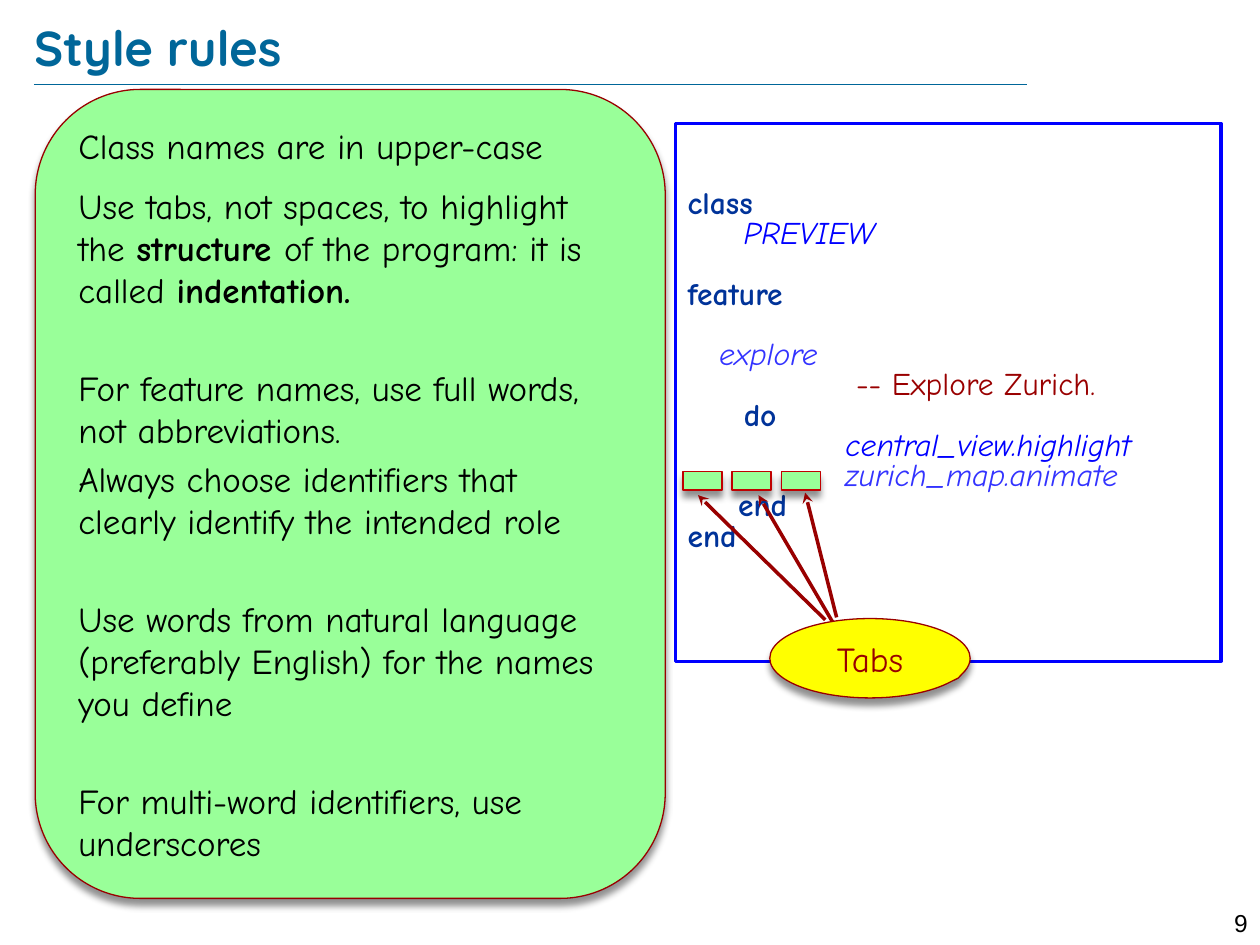
from lxml import etree
from pptx import Presentation
from pptx import util as u
from pptx.dml.color import RGBColor
from pptx.enum import shapes, text
from pptx.oxml.ns import qn

Inches, Pt = u.Inches, u.Pt
TEAL = RGBColor(0x00, 0x66, 0x99)
GREEN = RGBColor(0x99, 0xFF, 0x99)
DARK_RED = RGBColor(0x99, 0x00, 0x00)
RED = RGBColor(0xC0, 0x00, 0x00)
BLUE = RGBColor(0x00, 0x00, 0xFF)
SOFT_BLUE = RGBColor(0x33, 0x33, 0xFF)
NAVY = RGBColor(0x00, 0x33, 0x99)
YELLOW = RGBColor(0xFF, 0xFF, 0x00)
BLACK = RGBColor(0x00, 0x00, 0x00)

TITLE = dict(name="Quicksand", size=Pt(28), bold=True, color=TEAL)
NUMBER = dict(name="Arial", size=Pt(14), color=BLACK)
BODY = dict(name="Comic Neue", size=Pt(20), bold=False, color=BLACK)
STRONG = dict(BODY, bold=True)
LABEL = dict(BODY, color=DARK_RED)
PLAIN = dict(BODY, size=Pt(18))
KEYWORD = dict(PLAIN, bold=True, color=NAVY)
NAME = dict(PLAIN, italic=True, color=BLUE)
FEATURE = dict(NAME, color=SOFT_BLUE)
COMMENT = dict(PLAIN, color=DARK_RED)

SMALL_GAP, LARGE_GAP, BLOCK_GAP, CODE_GAP = 4, 10, 32, 17.3
RULES = [
    (0, [("Class names are in upper-case", BODY)]),
    (LARGE_GAP, [("Use tabs, not spaces, to highlight the ", BODY), ("structure ", STRONG),
                 ("of the program: it is called ", BODY), ("indentation.", STRONG)]),
    (BLOCK_GAP, [("For feature names, use full words, not abbreviations.", BODY)]),
    (SMALL_GAP, [("Always choose identifiers that clearly identify the intended role", BODY)]),
    (BLOCK_GAP, [("Use words from natural language (preferably English) for the names you define", BODY)]),
    (BLOCK_GAP, [("For multi-word identifiers, use underscores", BODY)]),
]
CODE = [
    (0, [("class", KEYWORD)]),
    (0, [("     ", KEYWORD), ("PREVIEW", NAME)]),
    (CODE_GAP, [("feature", KEYWORD)]),
    (CODE_GAP, [("   explore", FEATURE)]),
    (0, [("                -- Explore Zurich.", COMMENT)]),
    (0, [("     do", KEYWORD)]),
    (0, [("               ", PLAIN), ("central_view.highlight", NAME)]),
    (0, [("               ", PLAIN), ("zurich_map.animate", FEATURE)]),
    (0, [("\tend", KEYWORD)]),
    (0, [("end", KEYWORD)]),
]


def format_font(font, values):
    for key, value in values.items():
        if key == "color":
            font.color.rgb = value
        else:
            setattr(font, key, value)


def fill_text(frame, rows, line_spacing=None, tab=None, alignment=text.PP_ALIGN.LEFT, **frame_format):
    frame.word_wrap = True
    for key, value in frame_format.items():
        setattr(frame, key, value)
    for index, (gap, runs) in enumerate(rows):
        paragraph = frame.add_paragraph() if index else frame.paragraphs[0]
        if tab:
            tabs = etree.SubElement(paragraph._p.get_or_add_pPr(), qn("a:tabLst"))
            etree.SubElement(tabs, qn("a:tab"), pos=str(tab), algn="l")
        paragraph.alignment = alignment
        if gap:
            paragraph.space_before = Pt(gap)
        if line_spacing:
            paragraph.line_spacing = line_spacing
        for words, values in runs:
            run = paragraph.add_run()
            run.text = words
            format_font(run.font, values)


def add_shadow(shape):
    effects = shape._element.spPr.find(qn("a:effectLst"))
    shadow = etree.SubElement(effects, qn("a:outerShdw"), blurRad=str(Pt(4)), dist=str(Pt(4)),
                              dir="5400000", rotWithShape="0")
    color = etree.SubElement(shadow, qn("a:srgbClr"), val=str(BLACK))
    etree.SubElement(color, qn("a:alpha"), val="43000")


def add_box(slide, kind, box, line, width=0.75, fill=None):
    shape = slide.shapes.add_shape(kind, *map(Inches, box))
    shape.shadow.inherit = False
    shape.line.color.rgb = line
    shape.line.width = Pt(width)
    if fill is None:
        shape.fill.background()
    else:
        shape.fill.solid()
        shape.fill.fore_color.rgb = fill
        add_shadow(shape)
    return shape


def add_line(slide, start, end, color, width, arrow=False):
    line = slide.shapes.add_connector(shapes.MSO_CONNECTOR.STRAIGHT, *map(Inches, start + end))
    line.line.color.rgb = color
    line.line.width = Pt(width)
    if arrow:
        etree.SubElement(line.line._get_or_add_ln(), qn("a:tailEnd"), type="stealth")
    etree.SubElement(line._element.spPr, qn("a:effectLst"))


def add_header(slide, left, top, width, height):
    add_line(slide, (left, 0.67), (8.15, 0.67), TEAL, 0.25)
    title = slide.shapes.title
    title.left, title.top, title.width, title.height = map(Inches, (left, top, width, height))
    fill_text(title.text_frame, [(0, [("Style rules", TITLE)])],
              auto_size=text.MSO_AUTO_SIZE.NONE, vertical_anchor=text.MSO_ANCHOR.MIDDLE,
              margin_left=0, margin_top=0, margin_right=0, margin_bottom=0)


def add_page_number(slide, *box):
    number = slide.shapes.add_textbox(*map(Inches, box))
    fill_text(number.text_frame, [(0, [("9", NUMBER)])], alignment=text.PP_ALIGN.RIGHT)


def add_rules(slide, *box):
    panel = add_box(slide, shapes.MSO_SHAPE.ROUNDED_RECTANGLE, box, DARK_RED, fill=GREEN)
    fill_text(panel.text_frame, RULES, vertical_anchor=text.MSO_ANCHOR.MIDDLE)


def add_code(slide, left, top, width, height):
    panel = add_box(slide, shapes.MSO_SHAPE.RECTANGLE, (left, top, width, height), BLUE, 2)
    fill_text(panel.text_frame, CODE, line_spacing=0.8, tab=Inches(0.4),
              vertical_anchor=text.MSO_ANCHOR.TOP, margin_top=Inches(0.53))
    for column in range(3):
        marker = (left + 0.06 + 0.39 * column, top + 2.76, 0.31, 0.15)
        add_box(slide, shapes.MSO_SHAPE.RECTANGLE, marker, RED, fill=GREEN)
    for start, end in (((1.19, 3.94), (0.18, 2.95)),
                       ((1.25, 3.96), (0.66, 2.95)),
                       ((1.28, 3.92), (1.03, 2.93))):
        add_line(slide, (left + start[0], top + start[1]), (left + end[0], top + end[1]),
                 DARK_RED, 2, arrow=True)
    callout = add_box(slide, shapes.MSO_SHAPE.OVAL_CALLOUT,
                      (left + 0.75, top + 3.93, 1.59, 0.63), DARK_RED, fill=YELLOW)
    callout.adjustments[0], callout.adjustments[1] = 0.44, 0.25
    fill_text(callout.text_frame, [(0, [("Tabs", LABEL)])], alignment=text.PP_ALIGN.CENTER,
              vertical_anchor=text.MSO_ANCHOR.MIDDLE)


def main():
    presentation = Presentation()
    presentation.slide_width, presentation.slide_height = Inches(10), Inches(7.5)
    slide = presentation.slides.add_slide(presentation.slide_layouts[5])
    add_header(slide, 0.27, 0.13, 8.69, 0.48)
    add_page_number(slide, 9.45, 7.16, 0.55, 0.24)
    add_rules(slide, 0.28, 0.71, 5, 6.42)
    add_code(slide, 5.36, 0.98, 4.33, 4.27)
    presentation.save("out.pptx")


if __name__ == "__main__":
    main()
